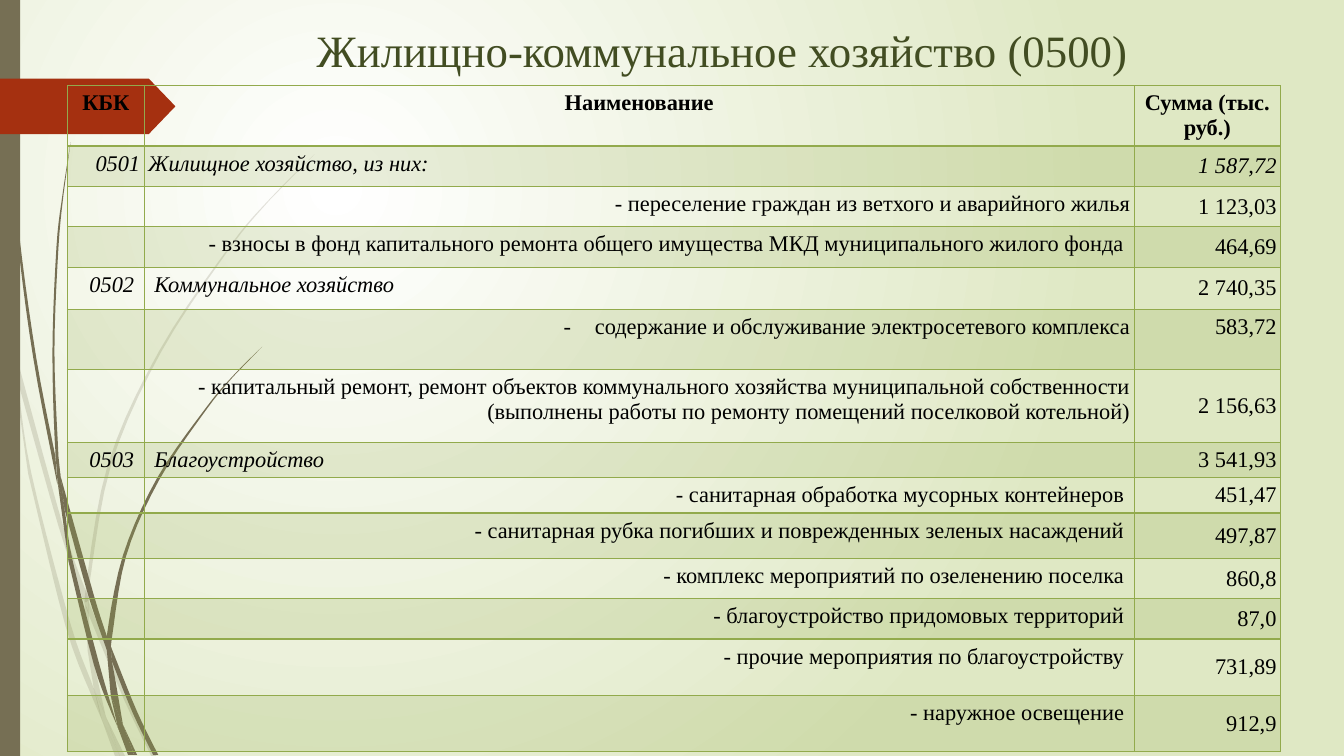
from lxml import etree
from pptx import Presentation
from pptx import util as u
from pptx.dml.color import RGBColor
from pptx.enum import shapes, text
from pptx.oxml import ns

Inches = u.Inches
FONT = "Times New Roman"
OLIVE = RGBColor(0x42, 0x4D, 0x22)
GREEN = RGBColor(0x92, 0xAA, 0x4C)
PALE = RGBColor(0xDF, 0xE8, 0xC4)
WHITE = RGBColor(0xFF, 0xFF, 0xFF)
BLACK = RGBColor(0, 0, 0)
BROWN = RGBColor(0x76, 0x6F, 0x54)
RUST = RGBColor(0xA5, 0x30, 0x10)
LEFT, CENTER, RIGHT = text.PP_ALIGN.LEFT, text.PP_ALIGN.CENTER, text.PP_ALIGN.RIGHT

BACK_BLADES = [
    ([(0, 2.82), (0.09, 3.22), (0.11, 3.5)], [(0.1, 3.44), (0, 2.99)]),
    ([(0.14, 3.45), (0.62, 5.2), (0.85, 5.86)], [(0.84, 5.99), (0.58, 5.22), (0.17, 3.76)]),
    ([(0.88, 5.96), (0.92, 6.07), (1.27, 6.92), (1.55, 7.5)], [(1.5, 7.5), (1.23, 6.94), (0.88, 6.1)]),
    ([(1.05, 7.11), (1.24, 7.5)], [(1.19, 7.5)]),
    ([(0.11, 3.5), (0.17, 3.76), (0.31, 4.69), (0.7, 6.19), (0.93, 6.83), (1.01, 7.14)],
     [(0.92, 6.93), (0.65, 6.21), (0.28, 4.7)]),
    ([(0.84, 5.99), (0.88, 6.1), (0.91, 6.46), (1.05, 7.11)], [(0.93, 6.83), (0.87, 6.46)]),
    ([(3.12, 1.53), (2.68, 1.97), (2.28, 2.44), (1.58, 3.48), (1.07, 4.61), (0.85, 5.84), (0.88, 5.96)],
     [(0.88, 5.84), (1.1, 4.62), (1.6, 3.49), (2.29, 2.45), (2.68, 1.98)]),
    ([(1.01, 7.14), (1.19, 7.5)], [(1.14, 7.5)]),
    ([(0.85, 5.86), (0.88, 5.96), (0.88, 6.1)], [(0.84, 5.99)]),
    ([(0.93, 6.83), (1.05, 7.11), (1.19, 7.5)], [(1.01, 7.14), (0.99, 7.07)]),
]
FRONT_BLADES = [
    ([(0.03, 0), (0.07, 1.1), (0.17, 2.33), (0.33, 3.55), (0.57, 4.81)],
     [(0.55, 4.53), (0.36, 3.55), (0.19, 2.32), (0.08, 1.09), (0.04, 0)]),
    ([(0.6, 4.72), (0.93, 5.9), (1.06, 6.31)], [(1.06, 6.45), (0.88, 5.92), (0.64, 5.05)]),
    ([(1.1, 6.41), (1.13, 6.49), (1.36, 7.06), (1.57, 7.49)], [(1.52, 7.49), (1.32, 7.08), (1.11, 6.56)]),
    ([(0.57, 4.77), (0.64, 5.05), (0.72, 5.56), (0.98, 6.57), (1.17, 7.22)],
     [(1.11, 7.08), (0.93, 6.59), (0.68, 5.57)]),
    ([(0.7, 1.41), (0.62, 1.93), (0.56, 2.45), (0.52, 3.49), (0.55, 4.49), (0.6, 4.72)],
     [(0.58, 4.53), (0.54, 3.49), (0.58, 2.45), (0.63, 1.93)]),
    ([(1.22, 7.19), (1.36, 7.49)], [(1.33, 7.49)]),
    ([(0.55, 4.49), (0.6, 4.72), (0.64, 5.05)], [(0.57, 4.77)]),
    ([(2.6, 3.44), (2.31, 3.73), (2.04, 4.05), (1.56, 4.74), (1.22, 5.51), (1.06, 6.31), (1.1, 6.41)],
     [(1.11, 6.33), (1.25, 5.52), (1.58, 4.76), (2.05, 4.06), (2.31, 3.74)]),
    ([(1.17, 7.22), (1.31, 7.49)], [(1.27, 7.49)]),
    ([(1.06, 6.45), (1.11, 6.56), (1.22, 7.19)], [(1.1, 6.91)]),
    ([(1.06, 6.31), (1.1, 6.41), (1.11, 6.56)], [(1.06, 6.45)]),
    ([(1.1, 6.91), (1.22, 7.19), (1.33, 7.49)], [(1.3, 7.49), (1.17, 7.22)]),
]

HEADINGS = ["КБК", "Наименование", "Сумма (тыс. руб.)"]
COLUMN_WIDTHS = [0.76, 9.82, 1.45]
HEADER_HEIGHT = 0.6
NARROW, WIDE = 0.04, 0.1
BULLETED = "содержание и обслуживание электросетевого комплекса"
BUDGET = [
    ("0501", "Жилищное хозяйство, из них:", "1 587,72", 0.4, NARROW),
    ("", "- переселение граждан из ветхого и аварийного жилья", "1 123,03", 0.4, NARROW),
    ("", "- взносы в фонд капитального ремонта общего имущества МКД муниципального жилого фонда",
     "464,69", 0.4, WIDE),
    ("0502", "Коммунальное хозяйство", "2 740,35", 0.42, WIDE),
    ("", BULLETED, "583,72", 0.6, NARROW),
    ("", "- капитальный ремонт, ремонт объектов коммунального хозяйства муниципальной "
     "собственности (выполнены работы по ремонту помещений поселковой котельной)",
     "2 156,63", 0.72, NARROW),
    ("0503", "Благоустройство", "3 541,93", 0.35, WIDE),
    ("", "- санитарная обработка мусорных контейнеров", "451,47", 0.35, WIDE),
    ("", "- санитарная рубка погибших и поврежденных зеленых насаждений", "497,87", 0.45, WIDE),
    ("", "- комплекс мероприятий по озеленению поселка", "860,8", 0.4, WIDE),
    ("", "- благоустройство придомовых территорий", "87,0", 0.4, WIDE),
    ("", "- прочие мероприятия по благоустройству", "731,89", 0.56, WIDE),
    ("", "- наружное освещение", "912,9", 0.56, WIDE),
]


def add_child(parent, tag, **attributes):
    return etree.SubElement(parent, ns.qn(tag), attributes)


def set_fill(item, properties, color, opacity):
    item.fill.solid()
    item.fill.fore_color.rgb = color
    if opacity < 100:
        tone = properties.find(ns.qn("a:solidFill"))[0]
        add_child(tone, "a:alpha", val=str(opacity * 1000))


def finish_shape(shape, color, opacity=100):
    shape.shadow.inherit = False
    set_fill(shape, shape._element.spPr, color, opacity)
    shape.line.fill.background()


def paint_background(page):
    fill = page.background.fill
    fill.gradient()
    for stop, color, position in zip(fill.gradient_stops, (WHITE, PALE), (0, 1)):
        stop.color.rgb = color
        stop.position = position
    gradient = next(page.element.iter(ns.qn("a:gradFill")))
    gradient.remove(gradient.find(ns.qn("a:lin")))
    circle = add_child(gradient, "a:path", path="circle")
    add_child(circle, "a:fillToRect", l="50000", t="50000", r="100000", b="100000")


def smooth_edge(points, steps=5):
    ends = [points[0]] + points + [points[-1]]
    curve = [points[0]]
    for a, b, c, d in zip(ends, ends[1:], ends[2:], ends[3:]):
        for step in range(1, steps + 1):
            t = step / steps
            curve.append(tuple(
                b[k] + 0.5 * t * (c[k] - a[k] + t * (2 * a[k] - 5 * b[k] + 4 * c[k] - d[k]
                                                     + t * (3 * b[k] - a[k] - 3 * c[k] + d[k])))
                for k in (0, 1)))
    return curve


def add_blade(page, edges, opacity):
    corners = [(Inches(x), Inches(y)) for edge in edges for x, y in smooth_edge(edge)]
    builder = page.shapes.build_freeform(*corners[0])
    builder.add_line_segments(corners[1:], close=True)
    finish_shape(builder.convert_to_shape(), BROWN, opacity)


def add_block(page, kind, left, top, width, height, color):
    box = page.shapes.add_shape(kind, Inches(left), Inches(top), Inches(width), Inches(height))
    finish_shape(box, color)
    return box


def add_span(para, words, size, color, bold=False, italic=False):
    span = para.add_run()
    span.text = words
    font = span.font
    font.name, font.size, font.color.rgb = FONT, u.Pt(size), color
    font.bold, font.italic = bold, italic


def add_title(page, words):
    title = page.shapes.title
    title.left, title.top, title.width, title.height = map(Inches, (2.29, 0.16, 9.75, 0.67))
    title.text_frame.vertical_anchor = text.MSO_ANCHOR.MIDDLE
    para = title.text_frame.paragraphs[0]
    para.alignment = CENTER
    add_span(para, words, 32, OLIVE)


def add_borders(cell, top, bottom):
    properties = cell._tc.get_or_add_tcPr()
    for index, (side, width) in enumerate(zip("LRTB", (1, 1, top, bottom))):
        line = etree.Element(ns.qn(f"a:ln{side}"), w=str(u.Pt(width)))
        add_child(add_child(line, "a:solidFill"), "a:srgbClr", val=str(GREEN))
        properties.insert(index, line)


def fill_cell(cell, words, alignment, margin=NARROW, middle=False, bold=False, italic=False):
    cell.margin_left = cell.margin_right = Inches(margin)
    cell.margin_top = cell.margin_bottom = Inches(0.05)
    cell.vertical_anchor = text.MSO_ANCHOR.MIDDLE if middle else text.MSO_ANCHOR.TOP
    para = cell.text_frame.paragraphs[0]
    para.alignment = alignment
    if words == BULLETED:
        properties = para._p.get_or_add_pPr()
        properties.set("marL", str(Inches(0.31)))
        properties.set("indent", str(-Inches(0.31)))
        add_child(properties, "a:buFont", typeface=FONT)
        add_child(properties, "a:buChar", char="-")
    if words:
        add_span(para, words, 16, BLACK, bold, italic)
    else:
        add_child(add_child(para._p, "a:endParaRPr", sz="1600"), "a:latin", typeface=FONT)


def add_budget_table(page):
    heights = [HEADER_HEIGHT] + [row[3] for row in BUDGET]
    frame = page.shapes.add_table(len(heights), 3, Inches(0.67), Inches(0.85),
                                  Inches(sum(COLUMN_WIDTHS)), Inches(sum(heights)))
    table = frame.table
    for column, width in zip(table.columns, COLUMN_WIDTHS):
        column.width = Inches(width)
    for column, heading in enumerate(HEADINGS):
        fill_cell(table.cell(0, column), heading, CENTER, bold=True)
    for index, (code, name, amount, _, margin) in enumerate(BUDGET, 1):
        section = bool(code)
        fill_cell(table.cell(index, 0), code, RIGHT, margin, italic=True)
        fill_cell(table.cell(index, 1), name, LEFT if section else RIGHT, margin, italic=section)
        fill_cell(table.cell(index, 2), amount, RIGHT, middle=name != BULLETED, italic=index == 1)
    for index, (row, height) in enumerate(zip(table.rows, heights)):
        row.height = Inches(height)
        for cell in row.cells:
            if index % 2:
                set_fill(cell, cell._tc.get_or_add_tcPr(), GREEN, 20)
            else:
                cell.fill.background()
            add_borders(cell, 2 if index == 1 else 1, 2 if index == 0 else 1)


def main():
    deck = Presentation()
    deck.slide_width, deck.slide_height = Inches(13.33), Inches(7.5)
    page = deck.slides.add_slide(deck.slide_layouts[5])
    paint_background(page)
    for blades, opacity in ((BACK_BLADES, 20), (FRONT_BLADES, 100)):
        for edges in blades:
            add_blade(page, edges, opacity)
    add_block(page, shapes.MSO_SHAPE.RECTANGLE, 0, 0, 0.2, 7.5, BROWN)
    arrow = add_block(page, shapes.MSO_SHAPE.PENTAGON, 0, 0.78, 1.74, 0.55, RUST)
    arrow.adjustments[0] = 0.48
    add_title(page, "Жилищно-коммунальное хозяйство (0500)")
    add_budget_table(page)
    deck.save("out.pptx")


if __name__ == "__main__":
    main()
